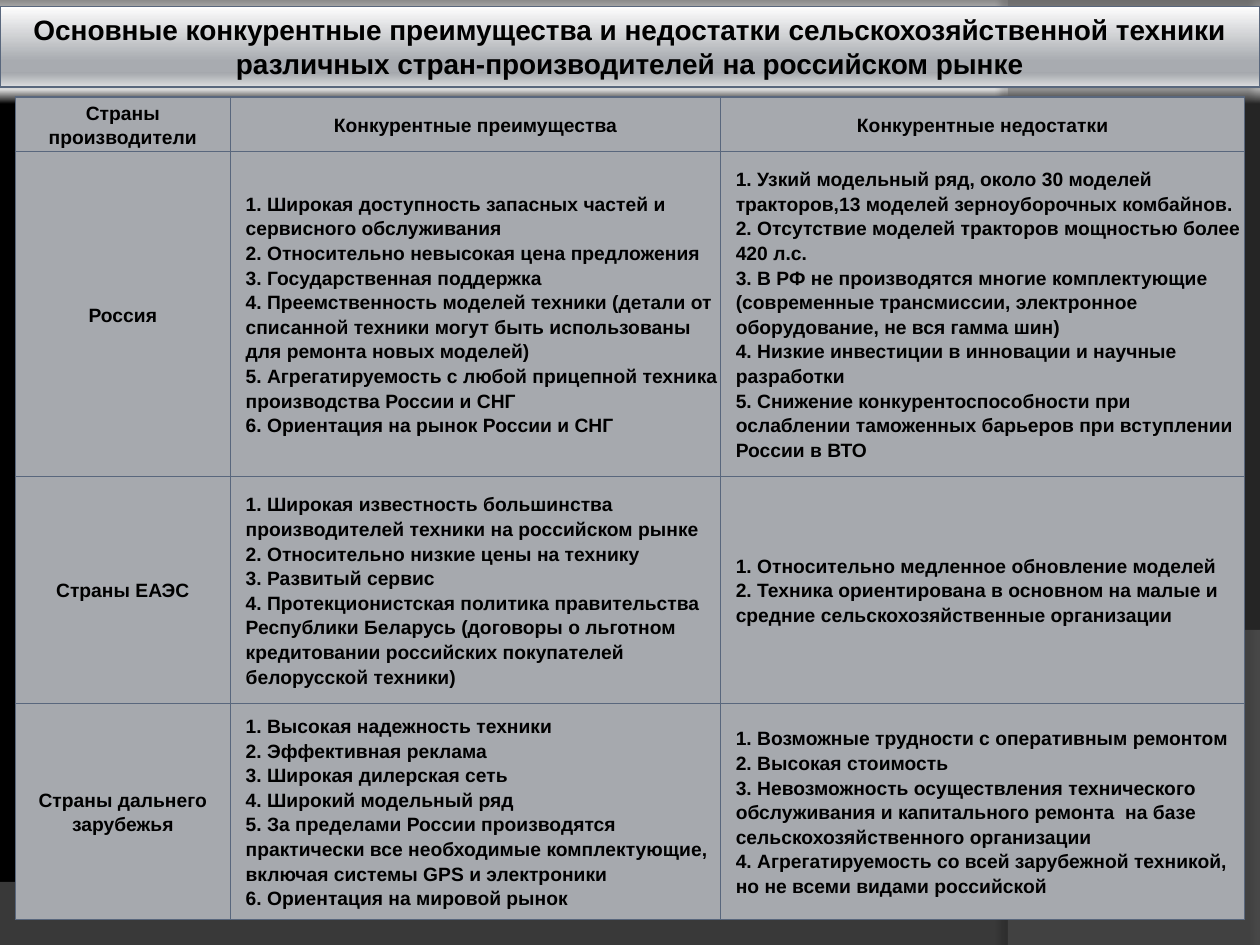
from dataclasses import dataclass

from lxml.etree import SubElement
from pptx import Presentation
from pptx.dml.color import RGBColor
from pptx.enum.shapes import MSO_SHAPE as Preset
from pptx.enum.text import MSO_ANCHOR as Anchor, MSO_AUTO_SIZE as AutoSize, PP_ALIGN as Align
from pptx.oxml.ns import qn
from pptx.util import Inches, Pt


@dataclass(frozen=True)
class Theme:
    font: str = "Arial"
    title_size: float = 16
    cell_size: float = 11
    line_width: float = 0.75
    line_spacing: float = 1.15
    text: str = "000000"
    border: str = "59677D"
    cell: str = "A6A9AE"
    lower_wave: str = "7F7F7F"
    right_wave: str = "5E5E5E"
    backdrop: tuple = ((0, "8C8C8C"), (1, "B0B0B0"), (9.5, "D8D8D8"), (11, "000000"), (100, "000000"))
    banner: tuple = ((0, "FEFEFE"), (68, "A8ABB0"), (81, "A5A8AD"), (86, "AEB1B5"), (100, "DDDEE0"))


THEME = Theme()

TITLE = ("Основные конкурентные преимущества и недостатки сельскохозяйственной техники "
         "различных стран-производителей на российском рынке")
HEADERS = ("Страны производители", "Конкурентные преимущества", "Конкурентные недостатки")
COUNTRIES = (
    ("Россия",
     ("Широкая доступность запасных частей и сервисного обслуживания",
      "Относительно невысокая цена предложения",
      "Государственная поддержка",
      "Преемственность моделей техники (детали от списанной техники могут быть использованы "
      "для ремонта новых моделей)",
      "Агрегатируемость с любой прицепной техника производства России и СНГ",
      "Ориентация на рынок России и СНГ"),
     ("Узкий модельный ряд, около 30 моделей тракторов,13 моделей зерноуборочных комбайнов.",
      "Отсутствие моделей тракторов мощностью более 420 л.с.",
      "В РФ не производятся многие комплектующие (современные трансмиссии, электронное "
      "оборудование, не вся гамма шин)",
      "Низкие инвестиции в инновации и научные разработки",
      "Снижение конкурентоспособности при ослаблении таможенных барьеров при вступлении "
      "России в ВТО")),
    ("Страны ЕАЭС",
     ("Широкая известность большинства производителей техники на российском рынке",
      "Относительно низкие цены на технику",
      "Развитый сервис",
      "Протекционистская политика правительства Республики Беларусь (договоры о льготном "
      "кредитовании российских покупателей белорусской техники)"),
     ("Относительно медленное обновление моделей",
      "Техника ориентирована в основном на малые и средние сельскохозяйственные организации")),
    ("Страны дальнего зарубежья",
     ("Высокая надежность техники",
      "Эффективная реклама",
      "Широкая дилерская сеть",
      "Широкий модельный ряд",
      "За пределами России производятся практически все необходимые комплектующие, "
      "включая системы GPS и электроники",
      "Ориентация на мировой рынок"),
     ("Возможные трудности с оперативным ремонтом",
      "Высокая стоимость",
      "Невозможность осуществления технического обслуживания и капитального ремонта  на базе "
      "сельскохозяйственного организации",
      "Агрегатируемость со всей зарубежной техникой, но не всеми видами российской")),
)
COLUMN_WIDTHS = (1.71, 3.89, 4.16)
ROW_HEIGHTS = (0.43, 2.58, 1.8, 1.72)


def add_color(parent, color):
    return SubElement(parent, qn("a:srgbClr"), val=color)


def add_alpha(color_element, percent):
    SubElement(color_element, qn("a:alpha"), val=str(percent * 1000))


def set_gradient(fill, element, stops):
    fill.gradient()
    fill.gradient_angle = 270
    stop_list = next(element.iter(qn("a:gsLst")))
    for stop in list(stop_list):
        stop_list.remove(stop)
    for position, color in stops:
        add_color(SubElement(stop_list, qn("a:gs"), pos=str(round(position * 1000))), color)


def curve_points(start, first, second, end, steps=40):
    def point(t):
        u = 1 - t
        return tuple(u ** 3 * a + 3 * u * u * t * b + 3 * u * t * t * c + t ** 3 * d
                     for a, b, c, d in zip(start, first, second, end))
    return [point(step / steps) for step in range(1, steps + 1)]


def add_wave(slide, points, color, opacity, shadow_opacity, distance, direction):
    builder = slide.shapes.build_freeform(*points[0], scale=Inches(1))
    builder.add_line_segments(points[1:], close=True)
    shape = builder.convert_to_shape()
    shape.fill.solid()
    shape.fill.fore_color.rgb = RGBColor.from_string(color)
    add_alpha(next(shape.element.iter(qn("a:srgbClr"))), opacity)
    shape.line.fill.background()
    shape.shadow.inherit = False
    effects = next(shape.element.iter(qn("a:effectLst")))
    shadow = SubElement(effects, qn("a:outerShdw"), blurRad=str(Pt(4)), dist=str(Pt(distance)),
                        dir=str(direction * 60000), algn="ctr", rotWithShape="0")
    add_alpha(add_color(shadow, "000000"), shadow_opacity)


def format_paragraph(paragraph, size, align):
    paragraph.alignment = align
    for run in paragraph.runs:
        run.font.name = THEME.font
        run.font.size = Pt(size)
        run.font.bold = True
        run.font.color.rgb = RGBColor.from_string(THEME.text)


def add_title(slide):
    banner = slide.shapes.add_shape(Preset.RECTANGLE, Inches(0), Inches(0.05), Inches(10), Inches(0.64))
    banner.shadow.inherit = False
    set_gradient(banner.fill, banner.element, THEME.banner)
    banner.line.color.rgb = RGBColor.from_string(THEME.border)
    banner.line.width = Pt(THEME.line_width)
    frame = banner.text_frame
    frame.word_wrap = True
    frame.auto_size = AutoSize.SHAPE_TO_FIT_TEXT
    frame.text = TITLE
    format_paragraph(frame.paragraphs[0], THEME.title_size, Align.CENTER)


def add_borders(cell):
    properties = cell._tc.get_or_add_tcPr()
    for index, side in enumerate(("lnL", "lnR", "lnT", "lnB")):
        line = SubElement(properties, qn(f"a:{side}"), w=str(Pt(THEME.line_width)))
        add_color(SubElement(line, qn("a:solidFill")), THEME.border)
        properties.insert(index, line)


def fill_cell(cell, content):
    numbered = not isinstance(content, str)
    lines = [f"{number}. {line}" for number, line in enumerate(content, 1)] if numbered else [content]
    cell.fill.solid()
    cell.fill.fore_color.rgb = RGBColor.from_string(THEME.cell)
    add_borders(cell)
    cell.vertical_anchor = Anchor.MIDDLE
    cell.margin_left = cell.margin_right = Inches(0.02)
    cell.margin_top = cell.margin_bottom = 0
    cell.text_frame.text = "\n".join(lines)
    for paragraph in cell.text_frame.paragraphs:
        format_paragraph(paragraph, THEME.cell_size, Align.LEFT if numbered else Align.CENTER)
        paragraph.line_spacing = THEME.line_spacing
        if numbered:
            paragraph._p.get_or_add_pPr().set("marL", str(Inches(0.1)))


def add_comparison(slide):
    rows = (HEADERS, *COUNTRIES)
    table = slide.shapes.add_table(len(rows), len(HEADERS), Inches(0.12), Inches(0.77),
                                   Inches(sum(COLUMN_WIDTHS)), Inches(sum(ROW_HEIGHTS))).table
    table.first_row = table.horz_banding = False
    for column, width in zip(table.columns, COLUMN_WIDTHS):
        column.width = Inches(width)
    for row, height, contents in zip(table.rows, ROW_HEIGHTS, rows):
        row.height = Inches(height)
        for cell, content in zip(row.cells, contents):
            fill_cell(cell, content)


def main():
    presentation = Presentation()
    presentation.slide_width, presentation.slide_height = Inches(10), Inches(7.5)
    slide = presentation.slides.add_slide(presentation.slide_layouts[6])
    set_gradient(slide.background.fill, slide.element, THEME.backdrop)
    lower = [(0, 7.05), (0, 7.51), (10, 7.51), (10, 5.2)]
    lower += curve_points((10, 5.2), (5.59, 7.29), (3.91, 7.19), (0, 7.05))
    add_wave(slide, lower, THEME.lower_wave, 45, 35, 3.5, 270)
    right = [(10, 0.02), (10, 7.5), (8.21, 7.5)]
    right += curve_points((8.21, 7.5), (9.35, 6.19), (10.18, 3), (8, 0))
    add_wave(slide, right, THEME.right_wave, 40, 45, 4, 180)
    add_title(slide)
    add_comparison(slide)
    presentation.save("out.pptx")


if __name__ == "__main__":
    main()
